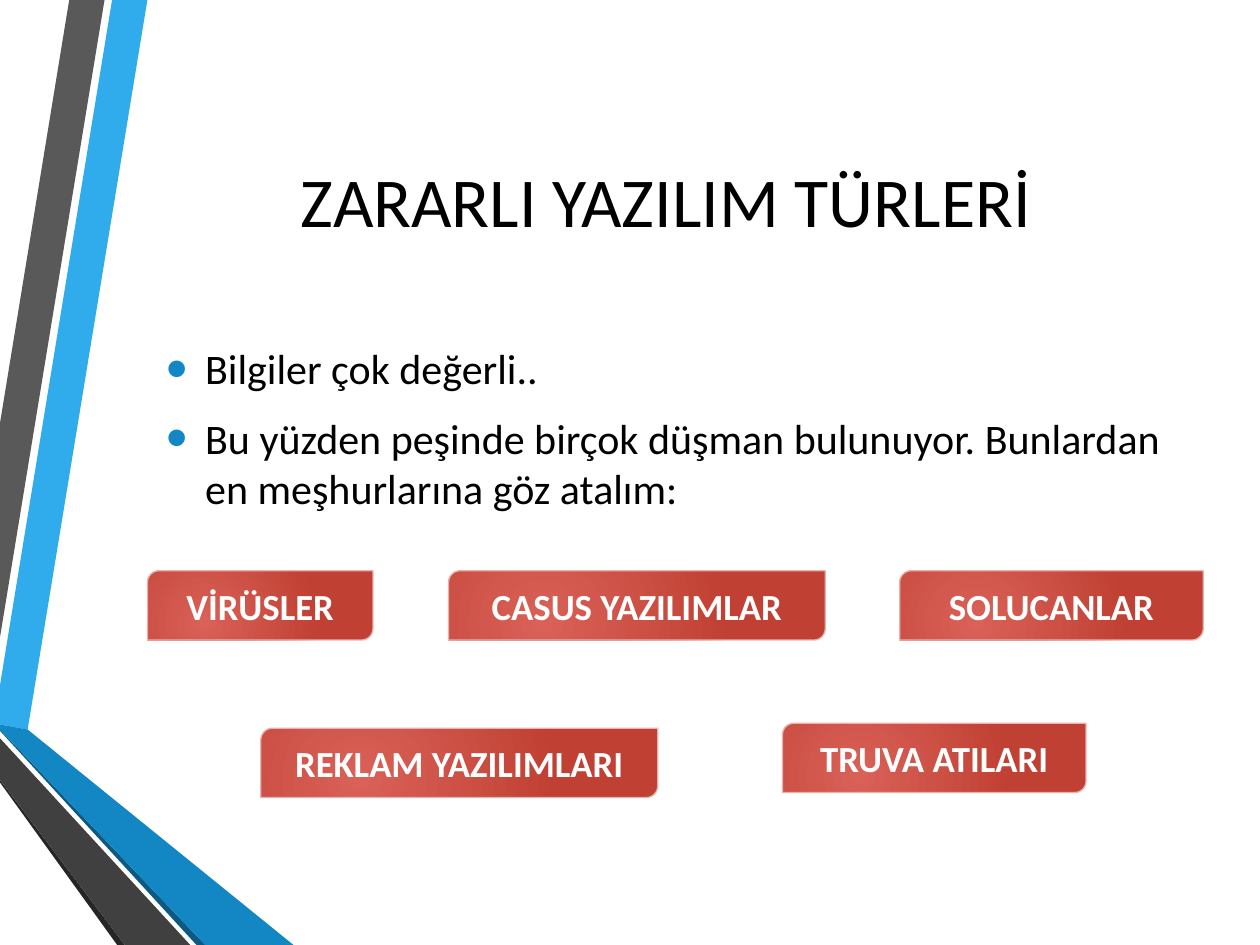
from dataclasses import dataclass

from lxml.etree import SubElement
from pptx import Presentation
from pptx.dml.color import RGBColor
from pptx.enum.shapes import MSO_SHAPE
from pptx.enum.text import MSO_ANCHOR, PP_ALIGN
from pptx.oxml.ns import qn
from pptx.util import Inches, Pt

COLUMNS, ROWS = 100, 75  # square grid over the slide


@dataclass(frozen=True)
class Theme:
    font: str = "Calibri"
    title_size: int = 40
    body_size: int = 24
    label_size: int = 21
    text: str = "000000"
    label_text: str = "FFFFFF"
    bullet: str = "1287C3"
    label_light: str = "D96157"
    label_dark: str = "C04033"
    label_line: str = "E8B2AF"


def color(value):
    return RGBColor.from_string(value)


def write_text(paragraph, text, *, font, size, fill, bold=False, align=PP_ALIGN.LEFT):
    paragraph.alignment = align
    run = paragraph.add_run()
    run.text = text
    run.font.name = font
    run.font.size = Pt(size)
    run.font.bold = bold
    run.font.color.rgb = color(fill)


def add_bullet(paragraph, fill, indent=0.31, percent=145):
    properties = paragraph._p.get_or_add_pPr()
    properties.set("marL", str(Inches(indent)))
    properties.set("indent", str(-Inches(indent)))
    bullet_color = SubElement(properties, qn("a:buClr"))
    SubElement(bullet_color, qn("a:srgbClr"), val=fill)
    SubElement(properties, qn("a:buSzPct"), val=str(percent * 1000))
    SubElement(properties, qn("a:buFont"), typeface="Arial")
    SubElement(properties, qn("a:buChar"), char="•")


class SlideBuilder:
    def __init__(self, presentation, theme):
        self.theme = theme
        self.slide = presentation.slides.add_slide(presentation.slide_layouts[6])
        self.column = presentation.slide_width / COLUMNS
        self.row = presentation.slide_height / ROWS

    def point(self, x, y):
        return round(x * self.column), round(y * self.row)

    def box(self, left, top, width, height):
        return (*self.point(left, top), *self.point(width, height))

    def ribbon(self, fill, points):
        start, *others = [self.point(x, y) for x, y in points]
        builder = self.slide.shapes.build_freeform(*start)
        builder.add_line_segments(others, close=True)
        shape = builder.convert_to_shape()
        shape.shadow.inherit = False
        shape.fill.solid()
        shape.fill.fore_color.rgb = color(fill)
        shape.line.fill.background()

    def text_frame(self, *place):
        frame = self.slide.shapes.add_textbox(*self.box(*place)).text_frame
        frame.word_wrap = True
        frame.vertical_anchor = MSO_ANCHOR.MIDDLE
        return frame

    def title(self, text, *place):
        theme = self.theme
        write_text(self.text_frame(*place).paragraphs[0], text, font=theme.font,
                   size=theme.title_size, fill=theme.text, align=PP_ALIGN.CENTER)

    def bullets(self, items, *place):
        theme = self.theme
        frame = self.text_frame(*place)
        for index, item in enumerate(items):
            paragraph = frame.add_paragraph() if index else frame.paragraphs[0]
            paragraph.space_before = Pt(theme.body_size * 0.2)
            paragraph.space_after = Pt(6)
            add_bullet(paragraph, theme.bullet)
            write_text(paragraph, item, font=theme.font, size=theme.body_size, fill=theme.text)

    def label(self, text, left, top, width, height=5.5):
        theme = self.theme
        shape = self.slide.shapes.add_shape(
            MSO_SHAPE.ROUND_2_DIAG_RECTANGLE, *self.box(left, top, width, height))
        shape.shadow.inherit = False
        shape.line.color.rgb = color(theme.label_line)
        shape.line.width = Pt(0.75)
        self.radial_fill(shape, theme.label_light, theme.label_dark)
        frame = shape.text_frame
        frame.word_wrap = True
        frame.vertical_anchor = MSO_ANCHOR.MIDDLE
        frame.margin_left = frame.margin_right = Inches(0.07)
        frame.margin_top = frame.margin_bottom = Inches(0.04)
        write_text(frame.paragraphs[0], text, font=theme.font, size=theme.label_size,
                   fill=theme.label_text, bold=True, align=PP_ALIGN.CENTER)

    def radial_fill(self, shape, inner, outer):
        shape.fill.gradient()
        for stop, position, value in zip(shape.fill.gradient_stops, (0, 1), (inner, outer)):
            stop.position = position
            stop.color.rgb = color(value)
        gradient = shape._element.spPr.find(qn("a:gradFill"))
        gradient.remove(gradient.find(qn("a:lin")))
        circle = SubElement(gradient, qn("a:path"), path="circle")
        SubElement(circle, qn("a:fillToRect"), l="50000", t="100000", r="100000", b="50000")


# Ribbons at the left edge, from back to front, in grid units
RIBBONS = [
    ("30ACEC", [(0, 54.4), (0, 57.5), (2.2, 57.9), (11.7, 0), (8.9, 0)]),
    ("595959", [(8.3, 0), (5.5, 0), (0, 33.6), (0, 50.6)]),
    ("262626", [(0, 61.9), (0, 62.1), (9.3, 75), (9.9, 75)]),
    ("0C5A82", [(0, 57.9), (0, 58), (15.6, 75), (16.3, 75)]),
    ("1287C3", [(0, 57.9), (16.3, 75), (23.3, 75), (2.2, 57.9), (0, 57.5)]),
    ("404040", [(0, 61.9), (9.9, 75), (15.1, 75), (0, 58.6)]),
]

# Malware types: text, left, top, width
LABELS = [
    ("VİRÜSLER", 11.7, 45.3, 17.9),
    ("CASUS YAZILIMLAR", 35.6, 45.3, 29.9),
    ("SOLUCANLAR", 71.4, 45.3, 24.1),
    ("TRUVA ATILARI", 62.1, 57.4, 24.1),
    ("REKLAM YAZILIMLARI", 20.7, 57.8, 31.5),
]


def main():
    presentation = Presentation()
    presentation.slide_width = Inches(10)
    presentation.slide_height = Inches(7.5)
    builder = SlideBuilder(presentation, Theme())

    # Decoration
    for fill, points in RIBBONS:
        builder.ribbon(fill, points)

    # Title and introduction
    builder.title("ZARARLI YAZILIM TÜRLERİ", 10.7, 5, 84.3, 21.7)
    builder.bullets([
        "Bilgiler çok değerli..",
        "Bu yüzden peşinde birçok düşman bulunuyor. Bunlardan en meşhurlarına göz atalım:",
    ], 12.2, 26.4, 82.2, 15.1)

    # Malware types
    for label in LABELS:
        builder.label(*label)

    presentation.save("out.pptx")


if __name__ == "__main__":
    main()
